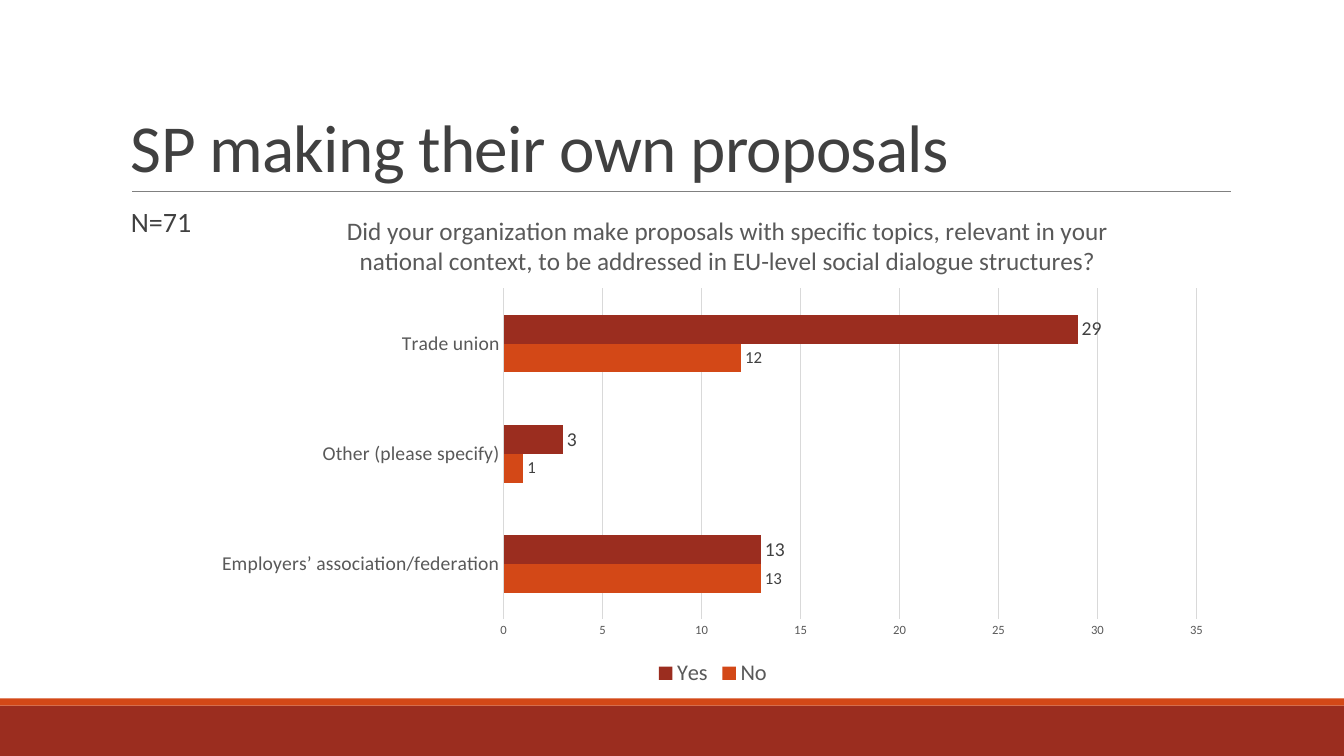
"""Build the slide on social partners' own proposals."""
import pptx
import pptx.chart.data
import pptx.dml.color
import pptx.enum.chart
import pptx.enum.shapes
import pptx.enum.text
import pptx.oxml
import pptx.oxml.ns
import pptx.util
from pptx.util import Inches

HEADLINE = "SP making their own proposals"
SAMPLE = "N=71"
QUESTION = (
    "Did your organization make proposals with specific topics, relevant in your "
    "national context, to be addressed in EU-level social dialogue structures?"
)
GROUPS = ["Employers’ association/federation", "Other (please specify)", "Trade union"]
ANSWERS = [
    ("No", (13, 1, 12), "orange", "label_no"),
    ("Yes", (13, 3, 29), "red", "label_yes"),
]
BANDS = [("red", 7, 0.5), ("orange", 6.93, 0.07)]
THEME = {
    "font": "Calibri",
    "colors": {"red": "9B2D1F", "orange": "D34817", "ink": "404040",
               "muted": "595959", "rule": "808080", "grid": "D9D9D9"},
    "sizes": {"headline": 48, "sample": 20, "question": 18, "legend": 16,
              "group": 14, "label_yes": 14, "label_no": 12, "scale": 9},
}
WIDTH, HEIGHT = 13.33, 7.5
CHART_BOX = (2.01, 1.85, 10.12, 5.01)
PLOT_BOX = (5, 2.86, 6.87, 3.28)
QUESTION_AT = (3.4, 2.07)


def color(name):
    return pptx.dml.color.RGBColor.from_string(THEME["colors"][name])


def style_font(font, size, ink):
    font.name = THEME["font"]
    font.size = pptx.util.Pt(THEME["sizes"][size])
    font.bold = False
    font.color.rgb = color(ink)


def style_line(line, ink, points):
    line.color.rgb = color(ink)
    line.width = pptx.util.Pt(points)


def add_band(slide, ink, top, height):
    band = slide.shapes.add_shape(
        pptx.enum.shapes.MSO_SHAPE.RECTANGLE,
        0, Inches(top), Inches(WIDTH), Inches(height))
    band.shadow.inherit = False
    band.fill.solid()
    band.fill.fore_color.rgb = color(ink)
    band.line.fill.background()


def add_rule(slide):
    rule = slide.shapes.add_connector(
        pptx.enum.shapes.MSO_CONNECTOR.STRAIGHT,
        Inches(1.31), Inches(1.9), Inches(12.21), Inches(1.9))
    style_line(rule.line, "rule", 0.5)
    pptx.oxml.ns.qn("a:effectLst")
    rule.element.spPr.append(pptx.oxml.parse_xml(
        '<a:effectLst xmlns:a="http://schemas.openxmlformats.org/drawingml/2006/main"/>'))


def add_text(slide, box, text, size, anchor, spacing):
    frame = slide.shapes.add_textbox(*map(Inches, box)).text_frame
    frame.word_wrap = True
    frame.vertical_anchor = anchor
    paragraph = frame.paragraphs[0]
    paragraph.line_spacing = spacing
    run = paragraph.add_run()
    run.text = text
    style_font(run.font, size, "ink")
    return run


def place(parent, box, inner=False):
    """Give a chart part a fixed place, as shares of the chart box."""
    layout = parent.find(pptx.oxml.ns.qn("c:layout"))
    if layout is not None:
        parent.remove(layout)
    left, top, width, height = CHART_BOX
    shares = [(box[0] - left) / width, (box[1] - top) / height]
    shares += [length / full for length, full in zip(box[2:], (width, height))]
    target = '<c:layoutTarget val="inner"/>' if inner else ""
    modes = '<c:xMode val="edge"/><c:yMode val="edge"/>'
    values = "".join(f'<c:{key} val="{share:.3f}"/>' for key, share in zip("xywh", shares))
    position = 0 if inner else 1
    parent.insert(position, pptx.oxml.parse_xml(
        '<c:layout xmlns:c="http://schemas.openxmlformats.org/drawingml/2006/chart">'
        f"<c:manualLayout>{target}{modes}{values}</c:manualLayout></c:layout>"))


def add_answers(slide):
    data = pptx.chart.data.CategoryChartData()
    data.categories = GROUPS
    for answer, counts, *_ in ANSWERS:
        data.add_series(answer, counts)
    kinds = pptx.enum.chart
    chart = slide.shapes.add_chart(
        kinds.XL_CHART_TYPE.BAR_CLUSTERED, *map(Inches, CHART_BOX), data).chart
    chart.font.name = THEME["font"]

    question = chart.chart_title.text_frame.paragraphs[0].add_run()
    question.text = QUESTION
    style_font(question.font, "question", "muted")
    chart.chart_title.include_in_layout = False
    place(chart.chart_title.format.fill and chart.element.chart.find(
        pptx.oxml.ns.qn("c:title")), QUESTION_AT)
    place(chart.element.chart.plotArea, PLOT_BOX, inner=True)

    chart.has_legend = True
    chart.legend.position = kinds.XL_LEGEND_POSITION.BOTTOM
    chart.legend.include_in_layout = False
    style_font(chart.legend.font, "legend", "muted")

    groups, scale = chart.category_axis, chart.value_axis
    for axis, size in ((groups, "group"), (scale, "scale")):
        axis.major_tick_mark = axis.minor_tick_mark = kinds.XL_TICK_MARK.NONE
        style_font(axis.tick_labels.font, size, "muted")
    style_line(groups.format.line, "grid", 0.75)
    scale.format.line.fill.background()
    scale.minimum_scale, scale.maximum_scale, scale.major_unit = 0, 35, 5
    style_line(scale.major_gridlines.format.line, "grid", 0.75)

    bars = chart.plots[0]
    bars.gap_width = 182
    bars.overlap = 0
    bars.vary_by_categories = False
    for series, (_, _, ink, size) in zip(bars.series, ANSWERS):
        series.format.fill.solid()
        series.format.fill.fore_color.rgb = color(ink)
        labels = series.data_labels
        labels.show_value = True
        labels.position = kinds.XL_LABEL_POSITION.OUTSIDE_END
        style_font(labels.font, size, "ink")


def main():
    deck = pptx.Presentation()
    deck.slide_width, deck.slide_height = Inches(WIDTH), Inches(HEIGHT)
    slide = deck.slides.add_slide(deck.slide_layouts[6])
    for band in BANDS:
        add_band(slide, *band)
    add_rule(slide)
    anchors = pptx.enum.text.MSO_ANCHOR
    headline = add_text(slide, (1.2, 0.31, 11, 1.59), HEADLINE, "headline",
                        anchors.BOTTOM, 0.85)
    headline.font._element.set("spc", "-50")
    add_text(slide, (1.2, 2.02, 2, 0.5), SAMPLE, "sample", anchors.TOP, 0.9)
    add_answers(slide)
    deck.save("out.pptx")


if __name__ == "__main__":
    main()
